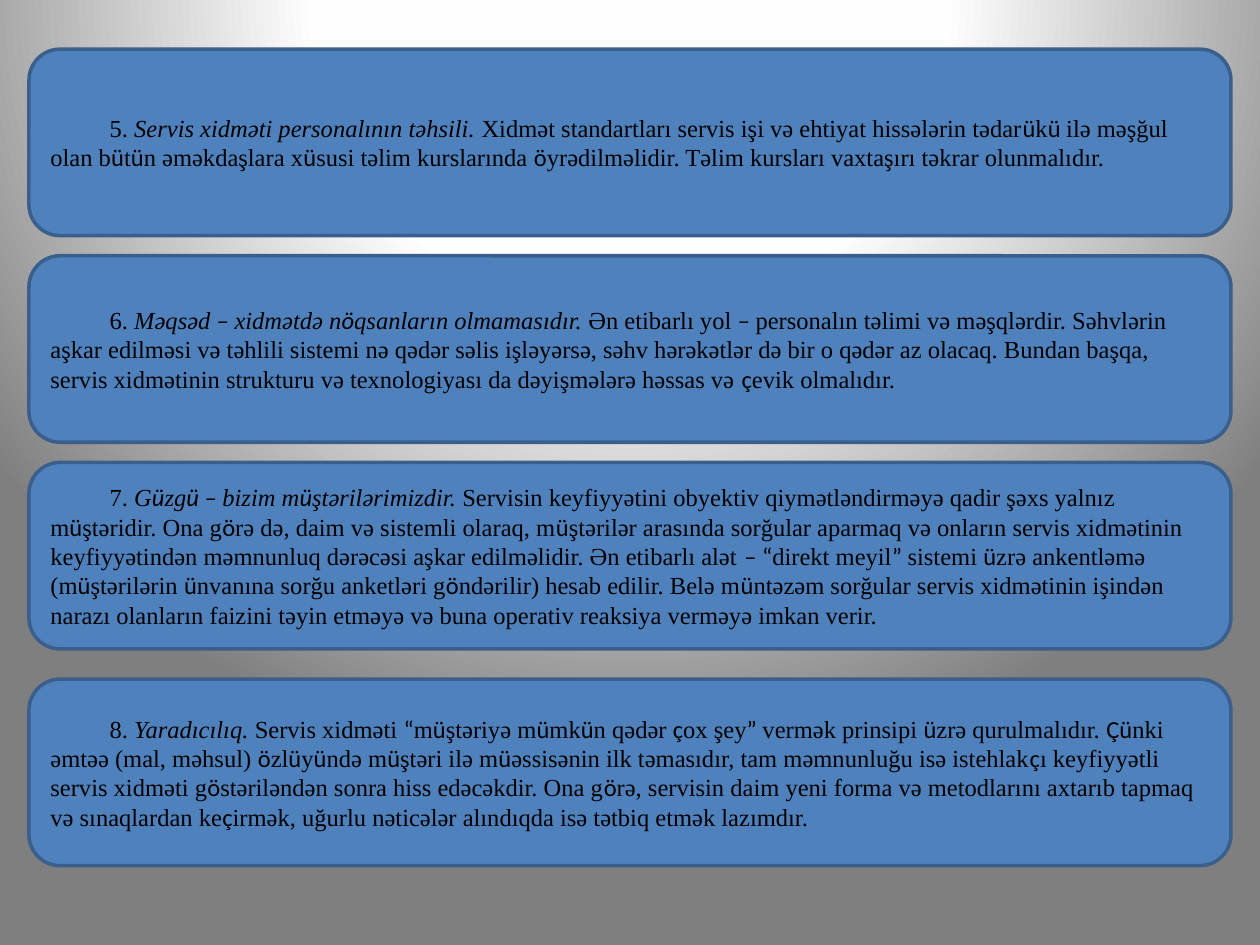
"""Build a slide with four numbered service principles in rounded panels."""
from dataclasses import dataclass
from itertools import groupby

from pptx import Presentation, util as u
from pptx.dml.color import RGBColor
from pptx.enum import shapes, text
from pptx.oxml import parse_xml
from pptx.oxml.ns import nsdecls


@dataclass(frozen=True)
class Theme:
    fill: str = "4F81BD"
    outline: str = "3A5F8C"
    ink: str = "000000"
    body_font: str = "Times New Roman"
    accent_font: str = "Calibri"
    size: int = 14
    line_width: int = 2
    gradient: tuple = ((0, "FFFFFF"), (40, "FEFEFE"), (100, "7F7F7F"))


THEME = Theme()
ACCENT_LETTERS = "üöçÇ–“”"
WIDTH, HEIGHT = 10, 7.5
MARGIN, PANEL_HEIGHT = 0.23, 1.48
FIRST_TOP, ROW_PITCH, LAST_ROW_SHIFT = 0.39, 1.64, 0.08
FIRST_LINE_INDENT = 0.47

PRINCIPLES = [
    ("5. ", "Servis xidməti personalının təhsili. ",
     "Xidmət standartları servis işi və ehtiyat hissələrin tədarükü ilə məşğul olan bütün "
     "əməkdaşlara xüsusi təlim kurslarında öyrədilməlidir. Təlim kursları vaxtaşırı təkrar "
     "olunmalıdır."),
    ("6. ", "Məqsəd – xidmətdə nöqsanların olmamasıdır. ",
     "Ən etibarlı yol – personalın təlimi və məşqlərdir. Səhvlərin aşkar edilməsi və təhlili "
     "sistemi nə qədər səlis işləyərsə, səhv hərəkətlər də bir o qədər az olacaq. Bundan başqa, "
     "servis xidmətinin strukturu və texnologiyası da dəyişmələrə həssas və çevik olmalıdır."),
    ("7. ", "Güzgü – bizim müştərilərimizdir. ",
     "Servisin keyfiyyətini obyektiv qiymətləndirməyə qadir şəxs yalnız müştəridir. Ona görə də, "
     "daim və sistemli olaraq, müştərilər arasında sorğular aparmaq və onların servis xidmətinin "
     "keyfiyyətindən məmnunluq dərəcəsi aşkar edilməlidir. Ən etibarlı alət – “direkt meyil” "
     "sistemi üzrə ankentləmə (müştərilərin ünvanına sorğu anketləri göndərilir) hesab edilir. "
     "Belə müntəzəm sorğular servis xidmətinin işindən narazı olanların faizini təyin etməyə və "
     "buna operativ reaksiya verməyə imkan verir."),
    ("8. ", "Yaradıcılıq. ",
     "Servis xidməti “müştəriyə mümkün qədər çox şey” vermək prinsipi üzrə qurulmalıdır. Çünki "
     "əmtəə (mal, məhsul) özlüyündə müştəri ilə müəssisənin ilk təmasıdır, tam məmnunluğu isə "
     "istehlakçı keyfiyyətli servis xidməti göstəriləndən sonra hiss edəcəkdir. Ona görə, "
     "servisin daim yeni forma və metodlarını axtarıb tapmaq və sınaqlardan keçirmək, uğurlu "
     "nəticələr alındıqda isə tətbiq etmək lazımdır."),
]


def split_by_font(content):
    """Yield (font, piece) pairs; a space keeps the font of the letter before it."""
    fonts = []
    for letter in content:
        if letter == " " and fonts:
            fonts.append(fonts[-1])
        else:
            accented = letter in ACCENT_LETTERS
            fonts.append(THEME.accent_font if accented else THEME.body_font)
    for font, pairs in groupby(zip(fonts, content), key=lambda pair: pair[0]):
        yield font, "".join(letter for _, letter in pairs)


def paint_background(slide):
    """Give the slide a circular gradient centred above its top edge."""
    stops = "".join(
        f'<a:gs pos="{position * 1000}"><a:srgbClr val="{color}"/></a:gs>'
        for position, color in THEME.gradient)
    background = parse_xml(
        f'<p:bg {nsdecls("p", "a")}><p:bgPr><a:gradFill rotWithShape="1">'
        f'<a:gsLst>{stops}</a:gsLst><a:path path="circle">'
        '<a:fillToRect l="50000" t="-80000" r="50000" b="180000"/></a:path>'
        '</a:gradFill><a:effectLst/></p:bgPr></p:bg>')
    slide.element.cSld.insert(0, background)


def add_panel(slide, top, number, heading, body):
    """Add one rounded panel holding a numbered principle."""
    shape = slide.shapes.add_shape(
        shapes.MSO_SHAPE.ROUNDED_RECTANGLE, u.Inches(MARGIN), u.Inches(top),
        u.Inches(WIDTH - 2 * MARGIN), u.Inches(PANEL_HEIGHT))
    shape.shadow.inherit = False
    shape.fill.solid()
    shape.fill.fore_color.rgb = RGBColor.from_string(THEME.fill)
    shape.line.color.rgb = RGBColor.from_string(THEME.outline)
    shape.line.width = u.Pt(THEME.line_width)
    frame = shape.text_frame
    frame.word_wrap = True
    frame.vertical_anchor = text.MSO_ANCHOR.MIDDLE
    paragraph = frame.paragraphs[0]
    paragraph.alignment = text.PP_ALIGN.LEFT
    paragraph.font.size = u.Pt(THEME.size)
    paragraph.font.color.rgb = RGBColor.from_string(THEME.ink)
    properties = paragraph._p.get_or_add_pPr()
    properties.set("marL", "0")
    properties.set("indent", str(u.Inches(FIRST_LINE_INDENT)))
    for content, italic in ((number, False), (heading, True), (body, False)):
        for font, piece in split_by_font(content):
            run = paragraph.add_run()
            run.text = piece
            run.font.name = font
            run.font.italic = italic
            run.font.size = u.Pt(THEME.size)
            run.font.color.rgb = RGBColor.from_string(THEME.ink)


def main():
    presentation = Presentation()
    presentation.slide_width = u.Inches(WIDTH)
    presentation.slide_height = u.Inches(HEIGHT)
    slide = presentation.slides.add_slide(presentation.slide_layouts.get_by_name("Blank"))
    paint_background(slide)
    last_row = len(PRINCIPLES) - 1
    for row, principle in enumerate(PRINCIPLES):
        shift = LAST_ROW_SHIFT if row == last_row else 0
        add_panel(slide, FIRST_TOP + row * ROW_PITCH + shift, *principle)
    presentation.save("out.pptx")


if __name__ == "__main__":
    main()
